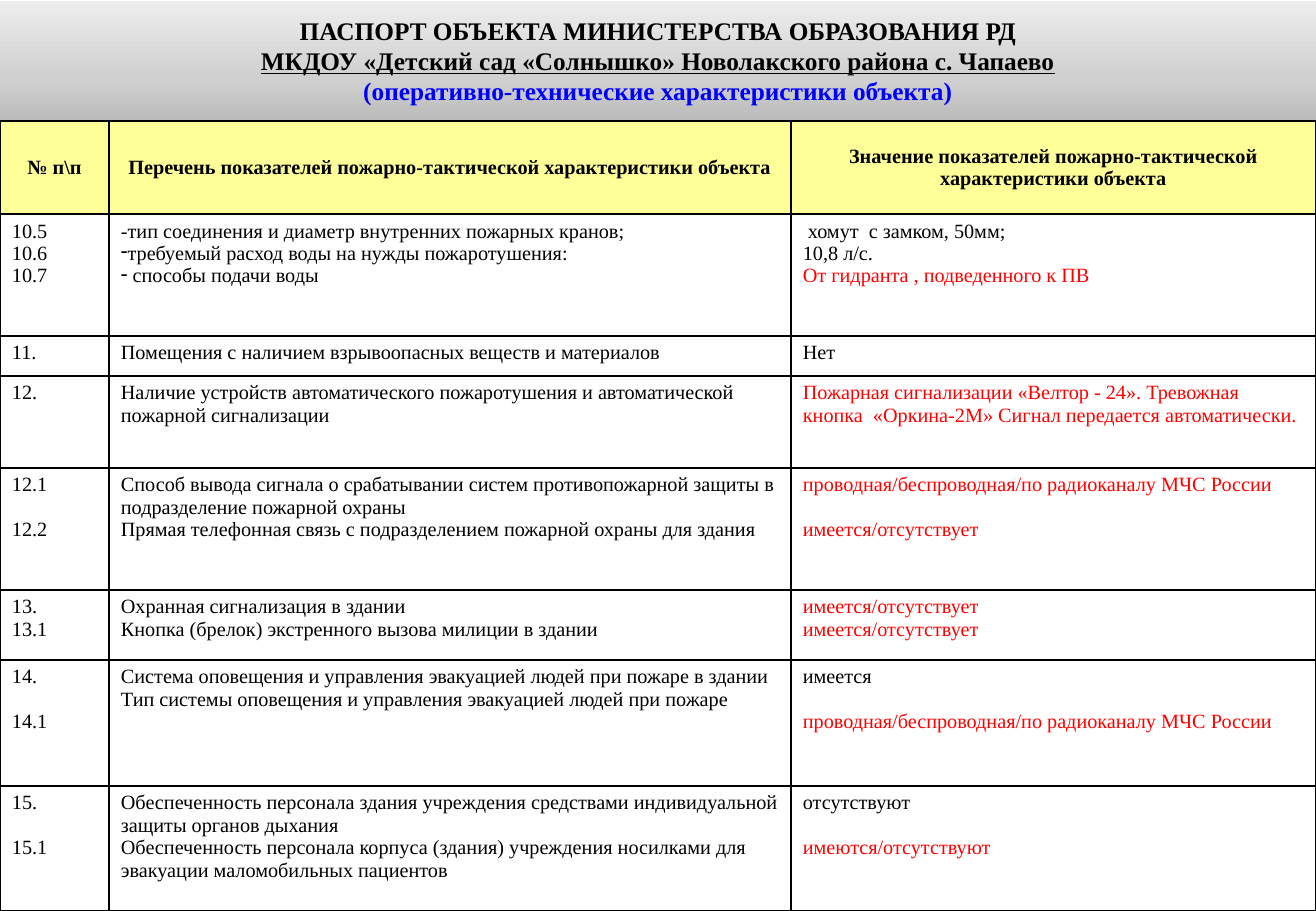
import copy
from dataclasses import dataclass

import pptx
import pptx.dml.color
import pptx.enum.text
import pptx.oxml
import pptx.oxml.ns
import pptx.util

Align = pptx.enum.text.PP_ALIGN
Anchor = pptx.enum.text.MSO_ANCHOR
qn = pptx.oxml.ns.qn


@dataclass(frozen=True)
class Theme:
    font: str = "Times New Roman"
    ink: str = "000000"
    red: str = "FF0000"
    blue: str = "0000FF"
    head: str = "FFFF99"
    paper: str = "FFFFFF"
    fade: tuple = ((0, "BCBCBC"), (0.35, "D0D0D0"), (1, "EDEDED"))
    big: int = 15
    small: int = 12
    skip: float = 13.3  # one line of small text
    rule: int = 1


THEME = Theme()


@dataclass(frozen=True)
class Line:
    text: str
    color: str = THEME.ink
    skip: bool = False  # leave one line free above
    dash: bool = False
    under: bool = False


@dataclass(frozen=True)
class Row:
    height: int
    cells: tuple


WIDE, HIGH = 1316, 911
BAND = 120
COLS = (109, 682, 525)
RADIO = "проводная/беспроводная/по радиоканалу МЧС России"
EITHER = "имеется/отсутствует"


def red(text: str, skip: bool = False) -> Line:
    return Line(text, THEME.red, skip)


TITLE = (
    Line("ПАСПОРТ ОБЪЕКТА МИНИСТЕРСТВА ОБРАЗОВАНИЯ РД"),
    Line("МКДОУ «Детский сад «Солнышко» Новолакского района с. Чапаево", under=True),
    Line("(оперативно-технические характеристики объекта)", THEME.blue),
)
ROWS = (
    Row(93, (
        [Line("№ п\\п")],
        [Line("Перечень показателей пожарно-тактической характеристики объекта")],
        [Line("Значение показателей пожарно-тактической характеристики объекта")])),
    Row(122, (
        [Line("10.5"), Line("10.6"), Line("10.7")],
        [Line("-тип соединения и диаметр внутренних пожарных кранов;"),
         Line("требуемый расход воды на нужды пожаротушения:", dash=True),
         Line(" способы подачи воды", dash=True)],
        [Line(" хомут  с замком, 50мм;"), Line("10,8 л/с."),
         red("От гидранта , подведенного к ПВ")])),
    Row(40, (
        [Line("11.")],
        [Line("Помещения с наличием взрывоопасных веществ и материалов")],
        [Line("Нет")])),
    Row(92, (
        [Line("12.")],
        [Line("Наличие устройств автоматического пожаротушения и автоматической "
              "пожарной сигнализации")],
        [red("Пожарная сигнализации «Велтор - 24». Тревожная кнопка  «Оркина-2М» "
             "Сигнал передается автоматически.")])),
    Row(122, (
        [Line("12.1"), Line("12.2", skip=True)],
        [Line("Способ вывода сигнала о срабатывании систем противопожарной защиты "
              "в подразделение пожарной охраны"),
         Line("Прямая телефонная связь с подразделением пожарной охраны для здания")],
        [red(RADIO), red(EITHER, skip=True)])),
    Row(70, (
        [Line("13."), Line("13.1")],
        [Line("Охранная сигнализация в здании"),
         Line("Кнопка (брелок) экстренного вызова милиции в здании")],
        [red(EITHER), red(EITHER)])),
    Row(126, (
        [Line("14."), Line("14.1", skip=True)],
        [Line("Система оповещения и управления эвакуацией людей при пожаре в здании"),
         Line("Тип системы оповещения и управления эвакуацией людей при пожаре")],
        [Line("имеется"), red(RADIO, skip=True)])),
    Row(125, (
        [Line("15."), Line("15.1", skip=True)],
        [Line("Обеспеченность персонала здания учреждения средствами "
              "индивидуальной защиты органов дыхания"),
         Line("Обеспеченность персонала корпуса (здания) учреждения носилками "
              "для эвакуации маломобильных пациентов")],
        [Line("отсутствуют"), red("имеются/отсутствуют", skip=True)])),
)


def px(count: int) -> int:
    return pptx.util.Emu(count * 7526)


def rgb(code: str) -> pptx.dml.color.RGBColor:
    return pptx.dml.color.RGBColor.from_string(code)


def write(frame, lines, *, size: int, bold: bool = False, align=Align.LEFT) -> None:
    frame.word_wrap = True
    for at, line in enumerate(lines):
        para = frame.add_paragraph() if at else frame.paragraphs[0]
        para.alignment = align
        if line.skip:
            para.space_before = pptx.util.Pt(THEME.skip)
        if line.dash:
            props = para._p.get_or_add_pPr()
            props.set("marL", "0")
            props.set("indent", "0")
            mark = pptx.oxml.parse_xml(
                f'<a:buChar {pptx.oxml.ns.nsdecls("a")} char="-"/>')
            props.append(mark)
        run = para.add_run()
        run.text = line.text
        font = run.font
        font.name, font.size, font.bold = THEME.font, pptx.util.Pt(size), bold
        font.underline = line.under
        font.color.rgb = rgb(line.color)


def edge(cell) -> None:
    props = cell._tc.get_or_add_tcPr()
    for side in "LRTB":
        props.append(pptx.oxml.parse_xml(
            f'<a:ln{side} {pptx.oxml.ns.nsdecls("a")} w="{THEME.rule * 12700}">'
            f'<a:solidFill><a:srgbClr val="{THEME.ink}"/></a:solidFill></a:ln{side}>'))


def banner(slide) -> None:
    title = slide.shapes.title
    title.left, title.top = px(0), px(1)
    title.width, title.height = px(WIDE), px(BAND - 1)
    # Three-stop fade, dark at the foot
    title.fill.gradient()
    title.fill.gradient_angle = 90
    stops = next(title._element.spPr.iter(qn("a:gsLst")))
    stops.append(copy.deepcopy(stops[0]))
    for stop, (place, code) in zip(title.fill.gradient_stops, THEME.fade):
        stop.position = place
        stop.color.rgb = rgb(code)
    frame = title.text_frame
    frame.auto_size = pptx.enum.text.MSO_AUTO_SIZE.NONE
    frame.vertical_anchor = Anchor.MIDDLE
    write(frame, TITLE, size=THEME.big, bold=True, align=Align.CENTER)


def grid(slide) -> None:
    table = slide.shapes.add_table(
        len(ROWS), len(COLS), px(0), px(BAND + 1), px(WIDE), px(HIGH - BAND - 1)).table
    table.first_row = table.horz_banding = False
    for col, width in zip(table.columns, COLS):
        col.width = px(width)
    for y, row in enumerate(ROWS):
        table.rows[y].height = px(row.height)
        head = y == 0
        for x, lines in enumerate(row.cells):
            cell = table.cell(y, x)
            edge(cell)
            cell.fill.solid()
            cell.fill.fore_color.rgb = rgb(THEME.head if head else THEME.paper)
            cell.margin_left = cell.margin_right = px(12)
            cell.margin_top = cell.margin_bottom = px(6)
            cell.vertical_anchor = Anchor.MIDDLE if head else Anchor.TOP
            write(cell.text_frame, lines, size=THEME.small, bold=head,
                  align=Align.CENTER if head else Align.LEFT)


def main() -> None:
    deck = pptx.Presentation()
    deck.slide_width, deck.slide_height = px(WIDE), px(HIGH)
    slide = deck.slides.add_slide(deck.slide_layouts[5])
    banner(slide)
    grid(slide)
    deck.save("out.pptx")


if __name__ == "__main__":
    main()
